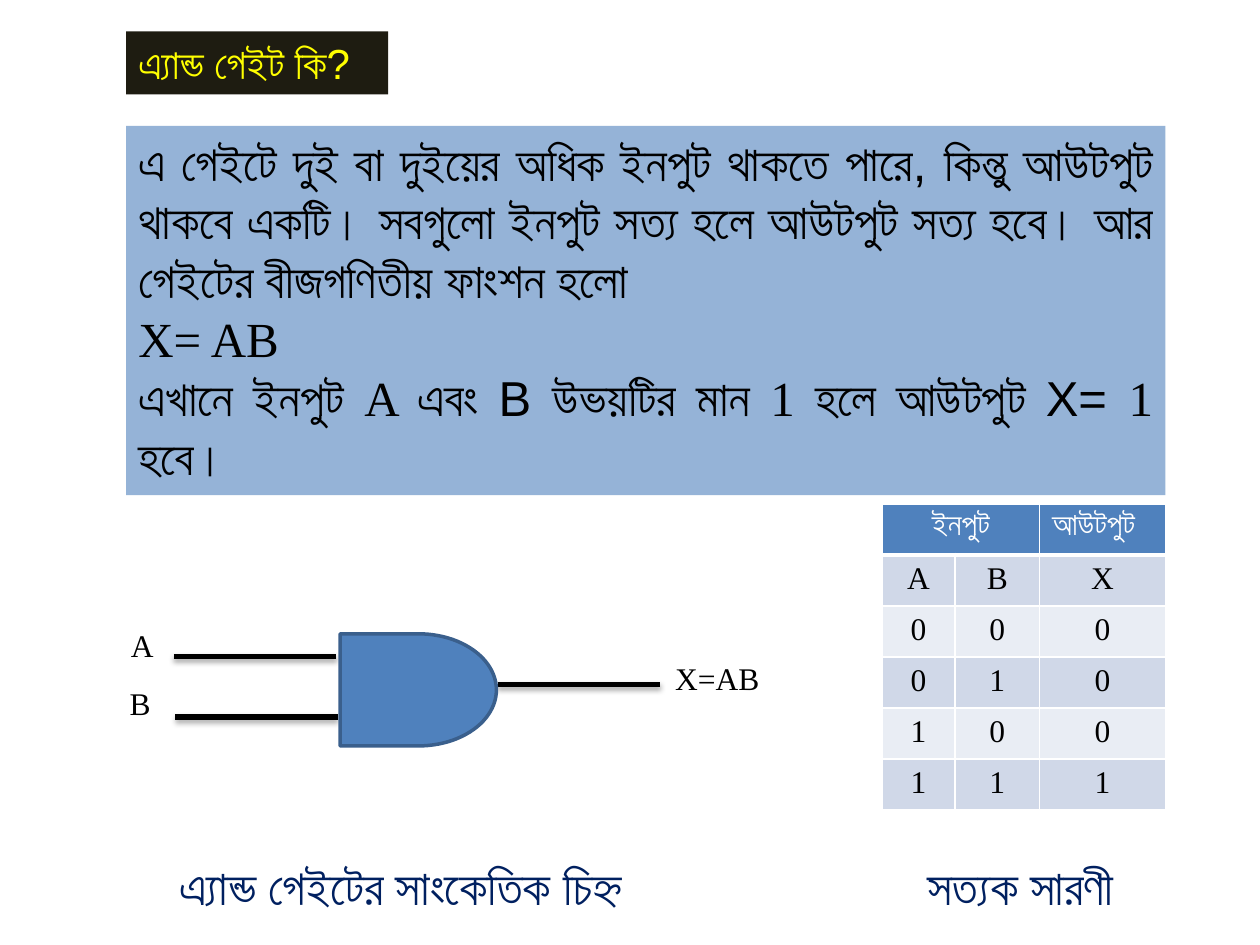
from lxml.etree import SubElement
from pptx import Presentation
from pptx.dml.color import RGBColor
from pptx.enum.shapes import MSO_CONNECTOR, MSO_SHAPE
from pptx.enum.text import MSO_ANCHOR, MSO_AUTO_SIZE, PP_ALIGN
from pptx.oxml import parse_xml
from pptx.oxml.ns import nsdecls, qn
from pptx.util import Inches, Pt

COLORS = {
    "black": "000000", "white": "FFFFFF", "yellow": "FFFF00", "navy": "002060",
    "title": "1E1C11", "panel": "95B3D7", "blue": "4F81BD", "outline": "3A5F8C",
    "band_dark": "D0D8E8", "band_light": "E9EDF4",
}
BENGALI = "Arial"
LATIN = "Times New Roman"

DEFINITION = [
    [("এ গেইটে দুই বা দুইয়ের অধিক ইনপুট থাকতে পারে, কিন্তু আউটপুট থাকবে একটি। "
      "সবগুলো ইনপুট সত্য হলে আউটপুট সত্য হবে। আর গেইটের বীজগণিতীয় ফাংশন হলো", BENGALI)],
    [("X= AB", LATIN)],
    [("এখানে ইনপুট ", BENGALI), ("A ", LATIN), ("এবং B উভয়টির মান ", BENGALI),
     ("1 ", LATIN), ("হলে আউটপুট X= ", BENGALI), ("1 ", LATIN), ("হবে।", BENGALI)],
]
TRUTH_TABLE = [["A", "B", "X"], ["0", "0", "0"], ["0", "1", "0"],
               ["1", "0", "0"], ["1", "1", "1"]]


def rgb(name):
    return RGBColor.from_string(COLORS[name])


def write(frame, text, font=BENGALI, size=18, color="black", bold=False,
          align=PP_ALIGN.LEFT):
    """Fill a frame with a string, or with paragraphs of (text, font) spans."""
    paragraphs = [[(text, font)]] if isinstance(text, str) else text
    for index, spans in enumerate(paragraphs):
        para = frame.add_paragraph() if index else frame.paragraphs[0]
        para.alignment = align
        for content, face in spans:
            span = para.add_run()
            span.text = content
            span.font.name = face
            span.font.size = Pt(size)
            span.font.bold = bold
            span.font.color.rgb = rgb(color)


def add_text(page, text, left, top, width, height, fill=None, wrap=True, **style):
    position = [Inches(value) for value in (left, top, width, height)]
    if fill:
        box = page.shapes.add_shape(MSO_SHAPE.RECTANGLE, *position)
        box.shadow.inherit = False
        box.fill.solid()
        box.fill.fore_color.rgb = rgb(fill)
        box.line.fill.background()
    else:
        box = page.shapes.add_textbox(*position)
    frame = box.text_frame
    frame.word_wrap = wrap
    frame.auto_size = MSO_AUTO_SIZE.SHAPE_TO_FIT_TEXT
    frame.vertical_anchor = MSO_ANCHOR.TOP
    write(frame, text, **style)


def add_wire(page, left, y, length=1.29):
    wire = page.shapes.add_connector(MSO_CONNECTOR.STRAIGHT, Inches(left), Inches(y),
                                     Inches(left + length), Inches(y))
    wire.line.color.rgb = rgb("black")
    wire.line.width = Pt(3)
    # Soft shadow straight below the wire
    effects = SubElement(wire._element.spPr, qn("a:effectLst"))
    shadow = SubElement(effects, qn("a:outerShdw"), blurRad=str(Pt(3.1)),
                        dist=str(Pt(1.8)), dir="5400000", rotWithShape="0")
    shade = SubElement(shadow, qn("a:srgbClr"), val=COLORS["black"])
    SubElement(shade, qn("a:alpha"), val="35000")


def add_gate(page):
    gate = page.shapes.add_shape(MSO_SHAPE.FLOWCHART_DELAY, Inches(2.7), Inches(5.03),
                                 Inches(1.24), Inches(0.89))
    gate.shadow.inherit = False
    gate.fill.solid()
    gate.fill.fore_color.rgb = rgb("blue")
    gate.line.color.rgb = rgb("outline")
    gate.line.width = Pt(2)


def set_borders(cell, top=1, bottom=1):
    properties = cell._tc.get_or_add_tcPr()
    sides = {"lnL": 1, "lnR": 1, "lnT": top, "lnB": bottom}
    for index, (side, width) in enumerate(sides.items()):
        properties.insert(index, parse_xml(
            f'<a:{side} {nsdecls("a")} w="{Pt(width)}"><a:solidFill>'
            f'<a:srgbClr val="{COLORS["white"]}"/></a:solidFill></a:{side}>'))


def add_truth_table(page):
    rows = [["ইনপুট", "", "আউটপুট"]] + TRUTH_TABLE
    table = page.shapes.add_table(len(rows), 3, Inches(7), Inches(4),
                                  Inches(2.25), Inches(2.43)).table
    for column, width in zip(table.columns, (0.58, 0.67, 1)):
        column.width = Inches(width)
    table.cell(0, 0).merge(table.cell(0, 1))
    for r, row in enumerate(rows):
        header = r == 0
        band = "blue" if header else ("band_dark" if r % 2 else "band_light")
        for c, value in enumerate(row):
            cell = table.cell(r, c)
            cell.fill.solid()
            cell.fill.fore_color.rgb = rgb(band)
            set_borders(cell, top=3 if r == 1 else 1, bottom=3 if header else 1)
            if value:
                write(cell.text_frame, value, font=BENGALI if header else LATIN,
                      color="white" if header else "black", bold=header,
                      align=PP_ALIGN.LEFT if header and c == 2 else PP_ALIGN.CENTER)


def main():
    deck = Presentation()
    deck.slide_width, deck.slide_height = Inches(10), Inches(7.5)
    page = deck.slides.add_slide(deck.slide_layouts[6])

    # Title and definition
    add_text(page, "এ্যান্ড গেইট কি?", 1, 0.25, 2.08, 0.5, fill="title",
             size=24, color="yellow")
    add_text(page, DEFINITION, 1, 1, 8.25, 2.93, fill="panel", size=28,
             align=PP_ALIGN.JUSTIFY)

    add_truth_table(page)

    # Captions under the symbol and the table
    add_text(page, "এ্যান্ড গেইটের সাংকেতিক চিহ্ন", 1.33, 6.75, 5, 0.57,
             size=28, color="navy")
    add_text(page, "সত্যক সারণী", 7.26, 6.75, 1.9, 0.57, size=28, color="navy")

    # Gate symbol: two inputs, one output
    for left, y in ((3.95, 5.43), (1.39, 5.69), (1.38, 5.21)):
        add_wire(page, left, y)
    add_gate(page)
    add_text(page, "A", 0.94, 4.92, 0.52, 0.4, font=LATIN)
    add_text(page, "B", 0.93, 5.38, 0.52, 0.4, font=LATIN)
    add_text(page, "X=AB", 5.26, 5.18, 0.88, 0.4, font=LATIN, wrap=False)

    deck.save("out.pptx")


if __name__ == "__main__":
    main()
